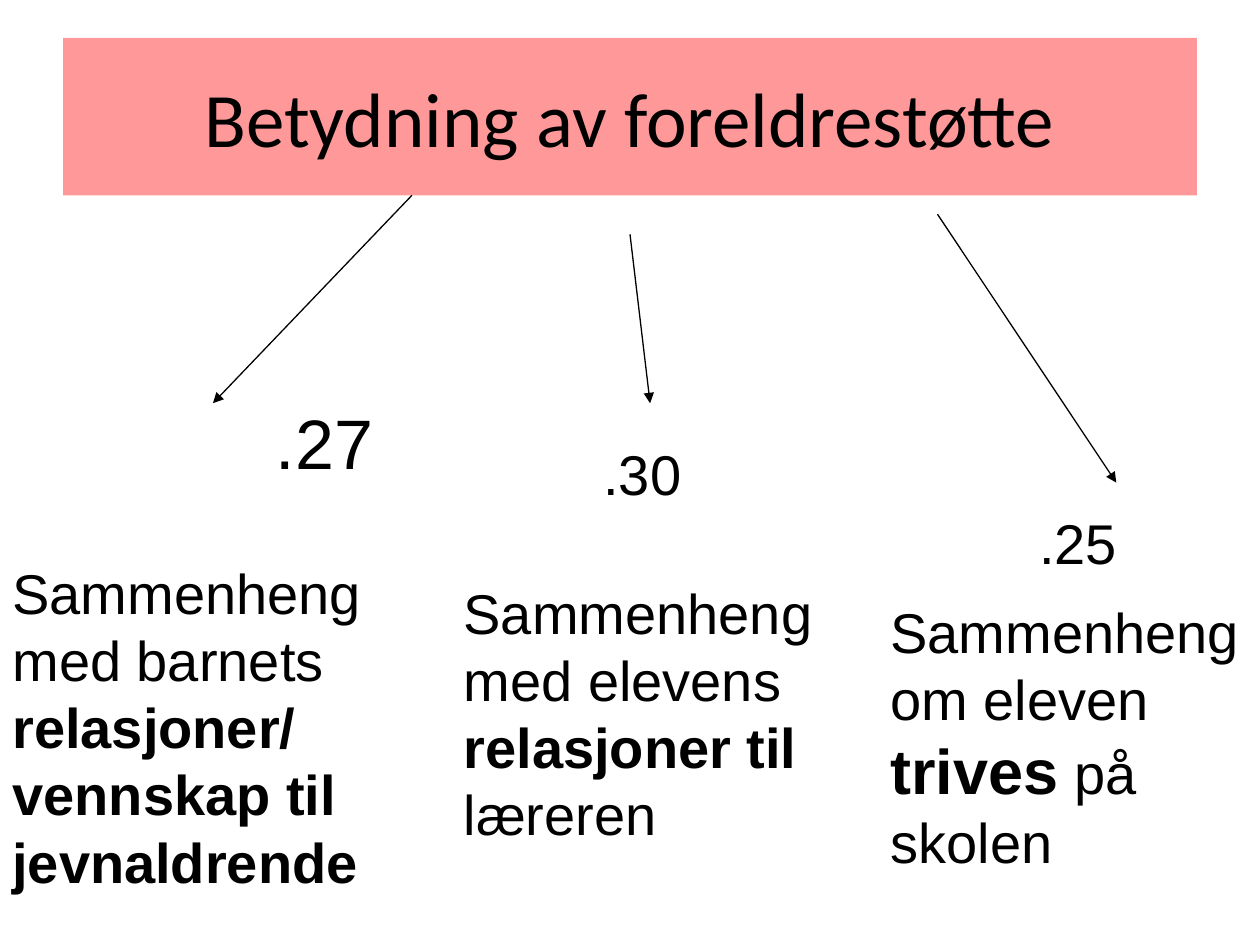
from lxml import etree
from pptx import Presentation
from pptx.dml.color import RGBColor
from pptx.enum.shapes import MSO_CONNECTOR
from pptx.enum.text import MSO_ANCHOR, MSO_AUTO_SIZE, PP_ALIGN
from pptx.oxml.ns import qn
from pptx.util import Pt

STRAIGHT = MSO_CONNECTOR.STRAIGHT
MIDDLE = MSO_ANCHOR.MIDDLE
CENTER = PP_ALIGN.CENTER
GROW = MSO_AUTO_SIZE.SHAPE_TO_FIT_TEXT
TITLE_ONLY = 5


def rgb(color):
    return RGBColor.from_string(color)


class Deck:
    title_font = "Calibri"
    body_font = "Arial"
    ink = "000000"
    band = "FF9999"
    title_size = 44
    body_size = 32

    def __init__(self, width, height):
        self.prs = Presentation()
        self.prs.slide_width, self.prs.slide_height = Pt(width), Pt(height)
        self.s = self.prs.slides.add_slide(self.prs.slide_layouts[TITLE_ONLY])

    def run(self, p, text, font, size, bold=False):
        r = p.add_run()
        r.text = text
        r.font.name, r.font.size, r.font.bold = font, Pt(size), bold
        r.font.color.rgb = rgb(self.ink)

    def title(self, text, x, y, w, h):
        sp = self.s.shapes.title
        sp.left, sp.top, sp.width, sp.height = Pt(x), Pt(y), Pt(w), Pt(h)
        sp.fill.solid()
        sp.fill.fore_color.rgb = rgb(self.band)
        tf = sp.text_frame
        tf.vertical_anchor = MIDDLE
        p = tf.paragraphs[0]
        p.alignment = CENTER
        self.run(p, text, self.title_font, self.title_size)

    def arrow(self, x1, y1, x2, y2):
        line = self.s.shapes.add_connector(STRAIGHT, Pt(x1), Pt(y1), Pt(x2), Pt(y2))
        line.line.color.rgb = rgb(self.ink)
        line.line.width = Pt(0.75)
        ln = line.line._get_or_add_ln()
        etree.SubElement(ln, qn("a:tailEnd"), type="triangle")
        etree.SubElement(ln.getparent(), qn("a:effectLst"))

    def text(self, x, y, w, h, runs):
        """Each run is (text, bold, size)."""
        tf = self.s.shapes.add_textbox(Pt(x), Pt(y), Pt(w), Pt(h)).text_frame
        tf.word_wrap = True
        tf.auto_size = GROW
        p = tf.paragraphs[0]
        p.space_before = Pt(4)
        for text, bold, size in runs:
            self.run(p, text, self.body_font, size, bold)


def main():
    deck = Deck(720, 540)
    size = deck.body_size
    deck.title("Betydning av foreldrestøtte", 36, 21.6, 648, 90)

    # Arrows from the title to the three effects
    for ends in [(235.4, 111.6, 121.7, 230.4),
                 (360, 133.9, 371.5, 230.4),
                 (535.7, 122.4, 637.9, 275.8)]:
        deck.arrow(*ends)

    # Correlation values
    for value, x, y, w, h, value_size in [
            (".27", 150.5, 224.6, 158.4, 55.4, 40),
            (".30", 337.7, 247.7, 118.8, 45.4, size),
            (".25", 586.8, 287.3, 118.8, 45.4, size)]:
        deck.text(x, y, w, h, [(value, False, value_size)])

    # Explanations under the values
    deck.text(0, 315.4, 235.4, 200.9, [
        ("Sammenheng med barnets ", False, size),
        ("relasjoner/ vennskap til jevnaldrende", True, size)])
    deck.text(257.8, 326.9, 244.1, 162.7, [
        ("Sammenheng med elevens ", False, size),
        ("relasjoner til ", True, size),
        ("læreren", False, size)])
    deck.text(501.8, 337.7, 218.2, 165.6, [
        ("Sammenheng om eleven ", False, size),
        ("trives", True, 36),
        (" på skolen", False, size)])

    deck.prs.save("out.pptx")


if __name__ == "__main__":
    main()
